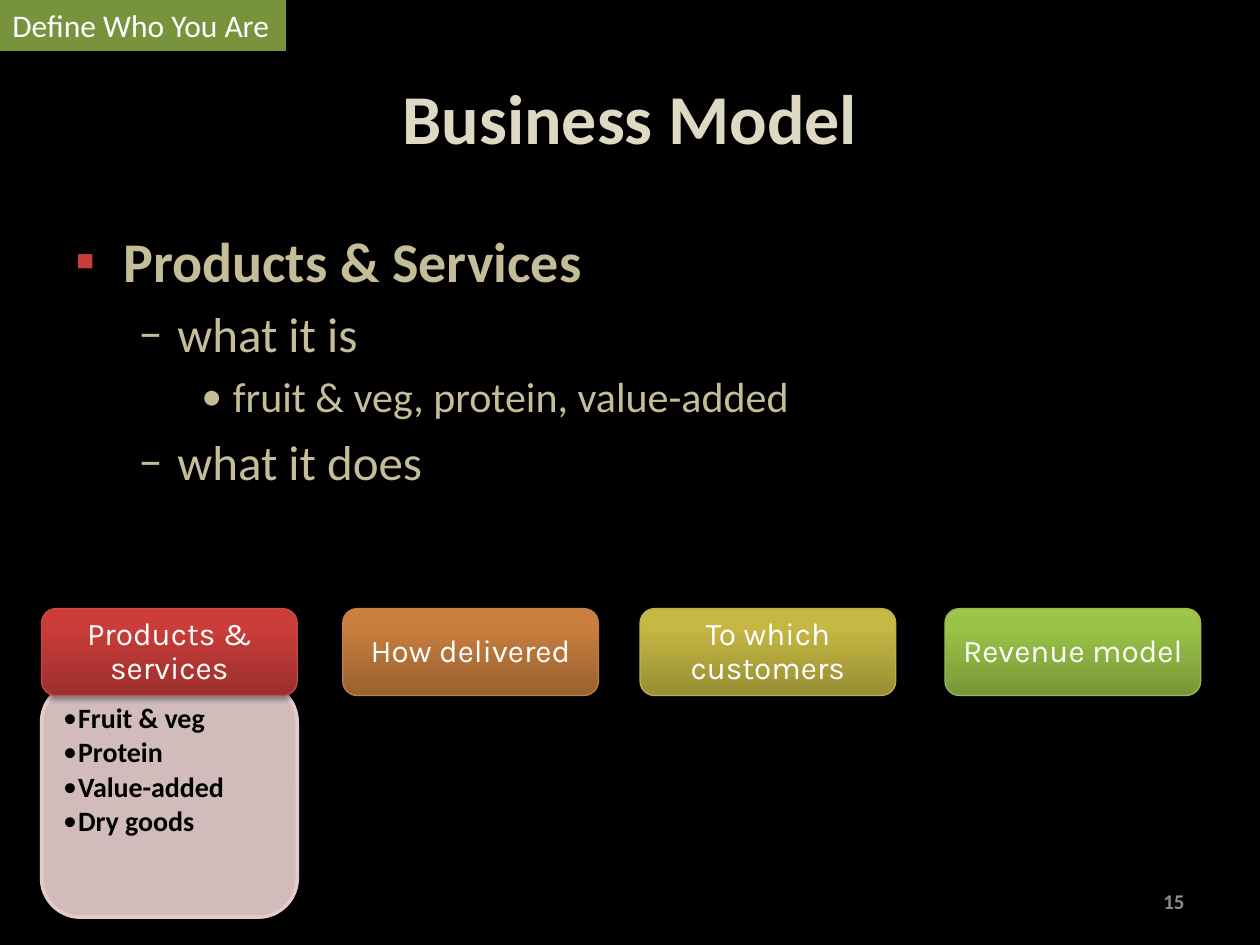
from dataclasses import dataclass

from lxml import etree
from pptx import Presentation
from pptx import util as u
from pptx.dml.color import RGBColor
from pptx.enum import shapes, text
from pptx.oxml import parse_xml
from pptx.oxml.ns import nsdecls, qn


@dataclass(frozen=True)
class Theme:
    sans: str = "Calibri"
    alt: str = "Karla"
    back: str = "000000"
    title: str = "DDD9C3"
    body: str = "C4BD97"
    mark: str = "CB3D3A"
    tag: str = "77933C"
    card: str = "E8D0D0"
    edge: str = "E3CBCB"
    light: str = "FFFFFF"
    dark: str = "000000"
    mute: str = "8C8C8C"
    head: int = 40
    levels: tuple = (32, 28, 24)
    label: int = 18
    item: int = 16
    small: int = 12


T = Theme()
WIDE, HIGH = u.Inches(10), u.Inches(7.5)
LEFT, CENTER, RIGHT = text.PP_ALIGN.LEFT, text.PP_ALIGN.CENTER, text.PP_ALIGN.RIGHT
MID = text.MSO_ANCHOR.MIDDLE
RECT, ROUND = shapes.MSO_SHAPE.RECTANGLE, shapes.MSO_SHAPE.ROUNDED_RECTANGLE

# left, colours from bottom to top, line colour, label
TABS = [
    (3.3, ("9C2F2D", "CB3D3A", "CE3B37"), "BF4C48", "Products & services"),
    (27.2, ("9A6130", "C87E3F", "CC7E3C"), "BC804D", "How delivered"),
    (50.8, ("988E34", "C6B843", "C9BB41"), "BBB051", "To which customers"),
    (75, ("779737", "9BC348", "9DC746"), "98B955", "Revenue model"),
]
POINTS = [
    (0, "Products & Services"),
    (1, "what it is"),
    (2, "fruit & veg, protein, value-added"),
    (1, "what it does"),
]
# margin, hanging indent, bullet and its colour for each level
STEPS = [(0.38, 0.38, "▪", T.mark), (0.81, 0.31, "–", T.body), (1.25, 0.25, "•", T.body)]
GOODS = ["Fruit & veg", "Protein", "Value-added", "Dry goods"]


def rgb(code):
    return RGBColor.from_string(code)


def place(left, top, width, height):
    """Turn percentages of the slide into lengths."""
    return [int(part * size / 100)
            for part, size in zip((left, top, width, height), (WIDE, HIGH) * 2)]


def frame(shape, anchor=text.MSO_ANCHOR.TOP, pads=(0.1, 0.05, 0.1, 0.05)):
    box = shape.text_frame
    box.word_wrap = True
    box.vertical_anchor = anchor
    box.margin_left, box.margin_top, box.margin_right, box.margin_bottom = map(u.Inches, pads)
    return box


def style(para, size, color, bold=False, face=T.sans, align=LEFT):
    para.alignment = align
    font = para.font
    font.name, font.size, font.bold = face, u.Pt(size), bold
    font.color.rgb = rgb(color)


def bullet(para, margin, hang, char, color):
    props = para._p.get_or_add_pPr()
    props.set("marL", str(u.Inches(margin)))
    props.set("indent", str(-u.Inches(hang)))
    tint = etree.SubElement(props, qn("a:buClr"))
    etree.SubElement(tint, qn("a:srgbClr"), val=color)
    etree.SubElement(props, qn("a:buFont"), typeface=T.sans)
    etree.SubElement(props, qn("a:buChar"), char=char)


def rows(box, words):
    """Yield one paragraph for each entry of words."""
    for i, word in enumerate(words):
        para = box.add_paragraph() if i else box.paragraphs[0]
        para.text = word
        yield para


def panel(slide, kind, spot, line=None, width=0.75):
    shape = slide.shapes.add_shape(kind, *place(*spot))
    shape.shadow.inherit = False
    if line:
        shape.line.color.rgb = rgb(line)
        shape.line.width = u.Pt(width)
    else:
        shape.line.fill.background()
    return shape


def fade(paint, share):
    """Make a solid colour partly see-through."""
    tint = paint._xPr.find(qn("a:solidFill"))[0]
    etree.SubElement(tint, qn("a:alpha"), val=str(share * 1000))


def blend(shape, colors):
    """Fill from the bottom up."""
    stops = "".join(f'<a:gs pos="{pos}000"><a:srgbClr val="{color}"/></a:gs>'
                    for pos, color in zip((0, 80, 100), colors))
    fill = parse_xml(f'<a:gradFill {nsdecls("a")} rotWithShape="1"><a:gsLst>{stops}</a:gsLst>'
                     '<a:lin ang="16200000" scaled="0"/></a:gradFill>')
    shape._element.spPr.find(qn("a:prstGeom")).addnext(fill)


def shade(shape):
    glow = parse_xml(f'<a:outerShdw {nsdecls("a")} blurRad="{u.Pt(3.1)}" dist="{u.Pt(1.8)}" '
                     'dir="5400000" rotWithShape="0"><a:srgbClr val="000000">'
                     '<a:alpha val="35000"/></a:srgbClr></a:outerShdw>')
    shape._element.spPr.find(qn("a:effectLst")).append(glow)


def note(slide, spot, words, size, color, align):
    box = frame(slide.shapes.add_textbox(*place(*spot)), MID)
    for para in rows(box, [words]):
        style(para, size, color, True, align=align)


def outline(slide):
    box = frame(slide.shapes.add_textbox(*place(5, 23.33, 90, 66)))
    for para, (level, _) in zip(rows(box, [word for _, word in POINTS]), POINTS):
        size = T.levels[level]
        para.level = level
        para.space_before = u.Pt(size * 0.2)
        bullet(para, *STEPS[level])
        style(para, size, T.body, level == 0)


def card(slide):
    shape = panel(slide, ROUND, (3.3, 72.27, 20.3, 24.8), T.edge, 2)
    shape.fill.solid()
    shape.fill.fore_color.rgb = rgb(T.card)
    fade(shape.fill, 90)
    shade(shape)
    for para in rows(frame(shape, pads=(0.08, 0.08, 0.11, 0.12)), GOODS):
        para.line_spacing = 0.9
        para.space_after = u.Pt(T.item * 0.15)
        bullet(para, 0.12, 0.12, "•", T.dark)
        style(para, T.item, T.dark, True)


def tag(slide):
    shape = panel(slide, RECT, (0, 0, 22.7, 5.4))
    shape.fill.solid()
    shape.fill.fore_color.rgb = rgb(T.tag)
    box = frame(shape)
    box.word_wrap = False
    for para in rows(box, ["Define Who You Are"]):
        style(para, T.label, T.light)


def tab(slide, left, colors, line, words):
    shape = panel(slide, ROUND, (left, 64.4, 20.3, 9.2), line)
    blend(shape, colors)
    shade(shape)
    for para in rows(frame(shape, MID, (0.11, 0.06, 0.11, 0.06)), [words]):
        para.line_spacing = 0.9
        style(para, T.label, T.light, face=T.alt, align=CENTER)


def main():
    deck = Presentation()
    deck.slide_width, deck.slide_height = WIDE, HIGH
    slide = deck.slides.add_slide(deck.slide_layouts[6])
    slide.background.fill.solid()
    slide.background.fill.fore_color.rgb = rgb(T.back)
    outline(slide)
    card(slide)
    note(slide, (5, 4, 90, 16.67), "Business Model", T.head, T.title, CENTER)
    tag(slide)
    for entry in TABS:
        tab(slide, *entry)
    note(slide, (71.7, 92.67, 23.3, 5.33), "15", T.small, T.mute, RIGHT)
    deck.save("out.pptx")


if __name__ == "__main__":
    main()
